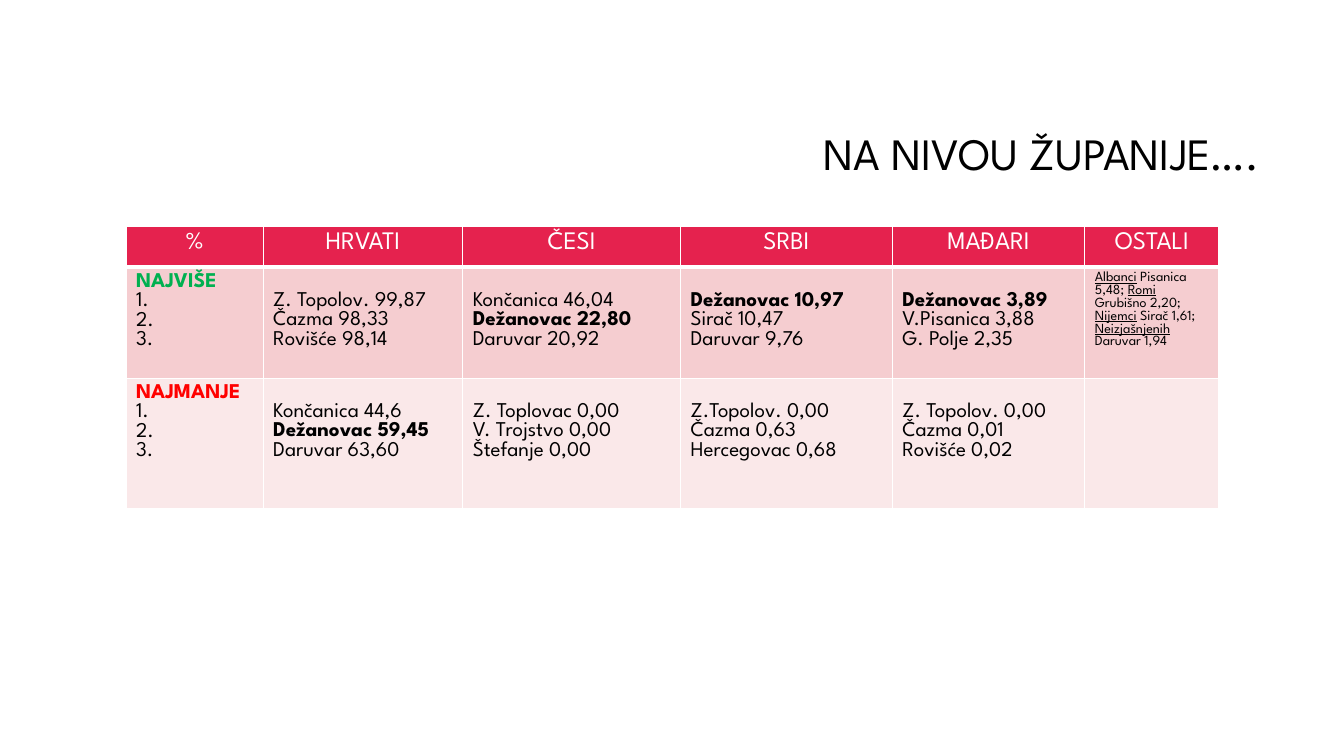
from dataclasses import dataclass

import pptx
import pptx.dml.color
import pptx.enum.text
import pptx.oxml
import pptx.oxml.ns
import pptx.util

Inches = pptx.util.Inches
Align = pptx.enum.text.PP_ALIGN


@dataclass(frozen=True)
class Theme:
    font: str = "League Spartan"
    black: str = "000000"
    white: str = "FFFFFF"
    red: str = "E5224E"
    title: int = 32
    head: int = 18
    body: int = 15
    small: int = 10


@dataclass(frozen=True)
class Band:
    label: str
    color: str
    fill: str
    ranks: tuple[tuple[str, ...], ...]


THEME = Theme()
HEADS = ("%", "HRVATI", "ČESI", "SRBI", "MAĐARI", "OSTALI")
WIDTHS = (1.36, 1.98, 2.16, 2.1, 1.91, 1.33)
HEIGHTS = (0.4, 1, 1.29)
FOCUS = "Dežanovac"  # the municipality shown in bold
BANDS = (
    Band("NAJVIŠE", "00B050", "F5CDD0", (
        ("Z. Topolov. 99,87", "Čazma 98,33", "Rovišće 98,14"),
        ("Končanica 46,04", "Dežanovac 22,80", "Daruvar 20,92"),
        ("Dežanovac 10,97", "Sirač 10,47", "Daruvar 9,76"),
        ("Dežanovac 3,89", "V.Pisanica 3,88", "G. Polje 2,35"))),
    Band("NAJMANJE", "FF0000", "FAE8E9", (
        ("Končanica 44,6", "Dežanovac 59,45", "Daruvar 63,60"),
        ("Z. Toplovac 0,00", "V. Trojstvo 0,00", "Štefanje 0,00"),
        ("Z.Topolov. 0,00", "Čazma 0,63", "Hercegovac 0,68"),
        ("Z. Topolov. 0,00", "Čazma 0,01", "Rovišće 0,02"))),
)
# Groups and their shares, in alternating underlined and plain runs
OTHERS = ("Albanci", " Pisanica 5,48; ", "Romi", " Grubišno 2,20; ",
          "Nijemci", " Sirač 1,61; ", "Neizjašnjenih ", "Daruvar 1,94")


def rgb(color: str) -> pptx.dml.color.RGBColor:
    return pptx.dml.color.RGBColor.from_string(color)


def style(run, size: int, color: str = THEME.black, bold: bool = False) -> None:
    run.font.name = THEME.font
    run.font.size = pptx.util.Pt(size)
    run.font.color.rgb = rgb(color)
    run.font.bold = bold


def edge(cell, base: float = 1) -> None:
    """Draw white borders; base is the bottom width in points."""
    props = cell._tc.get_or_add_tcPr()
    sides = (("lnL", 1), ("lnR", 1), ("lnT", 1), ("lnB", base))
    for i, (side, width) in enumerate(sides):
        props.insert(i, pptx.oxml.parse_xml(
            f'<a:{side} {pptx.oxml.ns.nsdecls("a")} w="{pptx.util.Pt(width)}">'
            f'<a:solidFill><a:srgbClr val="{THEME.white}"/></a:solidFill>'
            f'</a:{side}>'))


def paint(cell, color: str, base: float = 1) -> None:
    cell.fill.solid()
    cell.fill.fore_color.rgb = rgb(color)
    edge(cell, base)


def write(cell, lines: tuple[str, ...]) -> None:
    cell.text_frame.text = "\n".join(lines)
    for par in cell.text_frame.paragraphs:
        for run in par.runs:
            style(run, THEME.body, bold=run.text.startswith(FOCUS))


def add_title(slide) -> None:
    box = slide.shapes.add_textbox(
        Inches(3.17), Inches(0.84), Inches(9.42), Inches(1.41))
    frame = box.text_frame
    frame.word_wrap = True
    frame.vertical_anchor = pptx.enum.text.MSO_ANCHOR.MIDDLE
    frame.text = "NA NIVOU ŽUPANIJE…."
    par = frame.paragraphs[0]
    par.alignment = Align.RIGHT
    par.line_spacing = 0.9
    style(par.runs[0], THEME.title)


def add_table(slide) -> None:
    table = slide.shapes.add_table(
        len(HEIGHTS), len(WIDTHS), Inches(1.25), Inches(2.25),
        Inches(sum(WIDTHS)), Inches(sum(HEIGHTS))).table
    table.first_row = table.horz_banding = False
    for col, width in zip(table.columns, WIDTHS):
        col.width = Inches(width)
    for row, height in zip(table.rows, HEIGHTS):
        row.height = Inches(height)

    # Header row
    for col, head in enumerate(HEADS):
        cell = table.cell(0, col)
        cell.text_frame.text = head
        par = cell.text_frame.paragraphs[0]
        par.alignment = Align.CENTER
        style(par.runs[0], THEME.head, THEME.white)
        paint(cell, THEME.red, base=3)

    # Highest and lowest shares
    for row, band in enumerate(BANDS, 1):
        for col in range(len(HEADS)):
            paint(table.cell(row, col), band.fill)
        label = table.cell(row, 0)
        write(label, (band.label, "1.", "2.", "3."))
        style(label.text_frame.paragraphs[0].runs[0],
              THEME.body, band.color, bold=True)
        for col, lines in enumerate(band.ranks, 1):
            cell = table.cell(row, col)
            cell.margin_top = Inches(0.24)  # level with rank 1
            write(cell, lines)

    # Other groups
    par = table.cell(1, len(HEADS) - 1).text_frame.paragraphs[0]
    for i, text in enumerate(OTHERS):
        run = par.add_run()
        run.text = text
        style(run, THEME.small)
        run.font.underline = i % 2 == 0


def main() -> None:
    deck = pptx.Presentation()
    deck.slide_width, deck.slide_height = Inches(13.33), Inches(7.5)
    slide = deck.slides.add_slide(deck.slide_layouts[6])
    add_title(slide)
    add_table(slide)
    deck.save("out.pptx")


if __name__ == "__main__":
    main()
